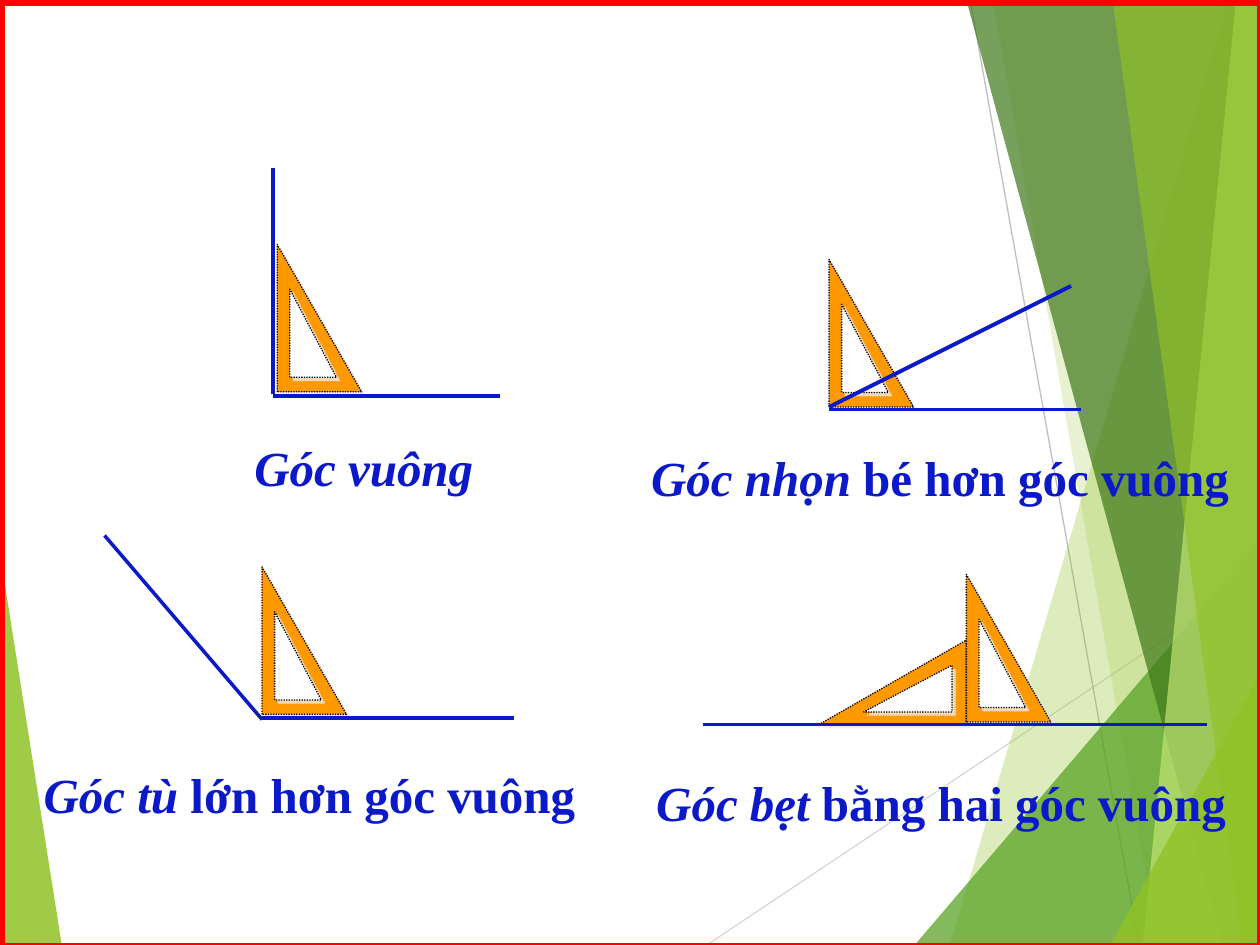
from dataclasses import dataclass
from math import cos, radians, sin

from lxml.etree import SubElement
from pptx import Presentation
from pptx.dml.color import RGBColor
from pptx.enum.dml import MSO_LINE as Dash
from pptx.enum.shapes import MSO_CONNECTOR as Connector, MSO_SHAPE as Preset
from pptx.enum.text import MSO_AUTO_SIZE as AutoSize, PP_ALIGN as Align
from pptx.oxml.ns import qn
from pptx.shapes.autoshape import Shape
from pptx.slide import Slide
from pptx.util import Inches, Pt

WIDTH, HEIGHT = 10, 7.5
Point = tuple[float, float]


@dataclass(frozen=True)
class Theme:
    ink: str = "0B19C8"
    frame: str = "FF0000"
    square: str = "FF9900"
    hole: str = "FFFFFF"
    outline: str = "000000"
    shadow: str = "EBEBEB"
    lime: str = "90C226"
    green: str = "54A021"
    forest: str = "3F7819"
    pale: str = "C0E474"
    light_gray: str = "D9D9D9"
    gray: str = "BFBFBF"
    font: str = "Times New Roman"
    caption_size: float = 28
    frame_width: float = 4.5
    thin: float = 0.75


THEME = Theme()


@dataclass(frozen=True)
class Facet:
    color: str
    opacity: int
    points: tuple[Point, ...]


@dataclass(frozen=True)
class Segment:
    start: Point
    end: Point
    color: str = THEME.ink
    width: float = 2


@dataclass(frozen=True)
class SetSquare:
    left: float
    top: float
    rotation: int = 0


@dataclass(frozen=True)
class Caption:
    left: float
    top: float
    width: float
    term: str
    rest: str = ""
    align: Align = Align.LEFT


LEFT_FACET = Facet(THEME.lime, 85, ((0, 4.39), (0.49, HEIGHT), (0, HEIGHT)))
RIGHT_FACETS = (
    Facet(THEME.lime, 30, ((9.75, 0), (7.54, HEIGHT), (WIDTH, HEIGHT), (WIDTH, 0))),
    Facet(THEME.lime, 20, ((7.88, 0), (9.19, HEIGHT), (WIDTH, HEIGHT), (WIDTH, 0))),
    Facet(THEME.green, 72, ((7.26, HEIGHT), (WIDTH, 4.29), (WIDTH, HEIGHT))),
    Facet(THEME.forest, 70, ((7.67, 0), (9.7, HEIGHT), (WIDTH, HEIGHT), (WIDTH, 0))),
    Facet(THEME.pale, 70, ((9.81, 0), (9.07, HEIGHT), (WIDTH, HEIGHT), (WIDTH, 0))),
    Facet(THEME.lime, 65, ((8.83, 0), (9.86, HEIGHT), (WIDTH, HEIGHT), (9.98, 0))),
    Facet(THEME.lime, 80, ((8.81, HEIGHT), (WIDTH, 5.35), (WIDTH, HEIGHT))),
)
BACKGROUND_LINES = (
    Segment((5.61, HEIGHT), (WIDTH, 4.57), THEME.light_gray, THEME.thin),
    Segment((7.7, 0), (9.04, HEIGHT), THEME.gray, THEME.thin),
)
SET_SQUARES = (
    SetSquare(2.08, 4.5),
    SetSquare(6.75, 4.83, 270),
    SetSquare(6.58, 2.06),
    SetSquare(2.2, 1.94),
    SetSquare(7.67, 4.56),
)
ANGLE_SIDES = (
    Segment((2.17, 3.14), (3.97, 3.14), width=2.25),
    Segment((2.17, 3.13), (2.17, 1.33), width=2.25),
    Segment((6.58, 3.25), (8.58, 3.25), width=2.25),
    Segment((6.58, 3.23), (8.5, 2.27), width=2.25),
    Segment((2.08, 5.7), (4.08, 5.7)),
    Segment((2.08, 5.71), (0.83, 4.25)),
    Segment((5.58, 5.75), (9.58, 5.75)),
)
CAPTIONS = (
    Caption(1.92, 3.42, 2.42, "Góc vuông"),
    Caption(5, 3.5, 4.92, "Góc nhọn", " bé hơn góc vuông", Align.CENTER),
    Caption(0.08, 6.02, 4.75, "Góc tù", " lớn hơn góc vuông", Align.CENTER),
    Caption(5.11, 6.08, 4.81, "Góc bẹt", " bằng hai góc vuông"),
)


def rgb(color: str) -> RGBColor:
    return RGBColor.from_string(color)


def fill_solid(shape: Shape, color: str) -> None:
    shape.fill.solid()
    shape.fill.fore_color.rgb = rgb(color)


def draw_facet(page: Slide, facet: Facet) -> None:
    corners = [(Inches(x), Inches(y)) for x, y in facet.points]
    builder = page.shapes.build_freeform(*corners[0])
    builder.add_line_segments(corners[1:], close=True)
    shape = builder.convert_to_shape()
    shape.shadow.inherit = False
    shape.line.fill.background()
    fill_solid(shape, facet.color)
    color = shape.fill._xPr.find(qn("a:solidFill"))[0]
    SubElement(color, qn("a:alpha"), val=str(facet.opacity * 1000))


def draw_segment(page: Slide, segment: Segment) -> None:
    ends = [Inches(value) for value in segment.start + segment.end]
    line = page.shapes.add_connector(Connector.STRAIGHT, *ends)
    line.line.color.rgb = rgb(segment.color)
    line.line.width = Pt(segment.width)
    SubElement(line._element.spPr, qn("a:effectLst"))


def add_shadow(shape: Shape) -> None:
    """Cast a hard, light shadow down and to the right."""
    shape.shadow.inherit = False
    effects = shape._element.spPr.find(qn("a:effectLst"))
    shadow = SubElement(effects, qn("a:outerShdw"), dist=str(Pt(2.8)), dir="2700000",
                        algn="ctr", rotWithShape="0")
    color = SubElement(shadow, qn("a:srgbClr"), val=THEME.shadow)
    SubElement(color, qn("a:alpha"), val="80000")


def draw_triangle(page: Slide, center: Point, size: Point, rotation: int, color: str) -> None:
    (x, y), (width, height) = center, size
    triangle = page.shapes.add_shape(
        Preset.RIGHT_TRIANGLE, Inches(x - width / 2), Inches(y - height / 2),
        Inches(width), Inches(height))
    triangle.rotation = rotation
    fill_solid(triangle, color)
    triangle.line.color.rgb = rgb(THEME.outline)
    triangle.line.width = Pt(THEME.thin)
    triangle.line.dash_style = Dash.ROUND_DOT
    add_shadow(triangle)


def draw_set_square(page: Slide, square: SetSquare) -> None:
    """Draw the outer triangle and its hole, both turned about the outer centre."""
    outer, hole = (0.67, 1.17), (0.37, 0.7)
    x, y = square.left + outer[0] / 2, square.top + outer[1] / 2
    shift_x, shift_y = -0.05, 0.12
    turn = radians(square.rotation)
    hole_center = (x + shift_x * cos(turn) - shift_y * sin(turn),
                   y + shift_x * sin(turn) + shift_y * cos(turn))
    draw_triangle(page, (x, y), outer, square.rotation, THEME.square)
    draw_triangle(page, hole_center, hole, square.rotation, THEME.hole)


def draw_caption(page: Slide, caption: Caption) -> None:
    box = page.shapes.add_textbox(Inches(caption.left), Inches(caption.top),
                                  Inches(caption.width), Inches(0.57))
    frame = box.text_frame
    frame.word_wrap = True
    frame.auto_size = AutoSize.SHAPE_TO_FIT_TEXT
    para = frame.paragraphs[0]
    para.alignment = caption.align
    for text, italic in ((caption.term, True), (caption.rest, False)):
        if text:
            span = para.add_run()
            span.text = text
            span.font.name = THEME.font
            span.font.size = Pt(THEME.caption_size)
            span.font.bold = True
            span.font.italic = italic
            span.font.color.rgb = rgb(THEME.ink)


def draw_frame(page: Slide) -> None:
    frame = page.shapes.add_shape(Preset.RECTANGLE, Inches(0.01), Inches(0.02),
                                  Inches(WIDTH), Inches(HEIGHT))
    frame.shadow.inherit = False
    frame.fill.background()
    frame.line.color.rgb = rgb(THEME.frame)
    frame.line.width = Pt(THEME.frame_width)


def main() -> None:
    deck = Presentation()
    deck.slide_width, deck.slide_height = Inches(WIDTH), Inches(HEIGHT)
    page = deck.slides.add_slide(deck.slide_layouts[6])
    for draw, items in (
        (draw_facet, (LEFT_FACET,)), (draw_segment, BACKGROUND_LINES),
        (draw_facet, RIGHT_FACETS), (draw_set_square, SET_SQUARES),
        (draw_segment, ANGLE_SIDES), (draw_caption, CAPTIONS),
    ):
        for item in items:
            draw(page, item)
    draw_frame(page)
    deck.save("out.pptx")


if __name__ == "__main__":
    main()
